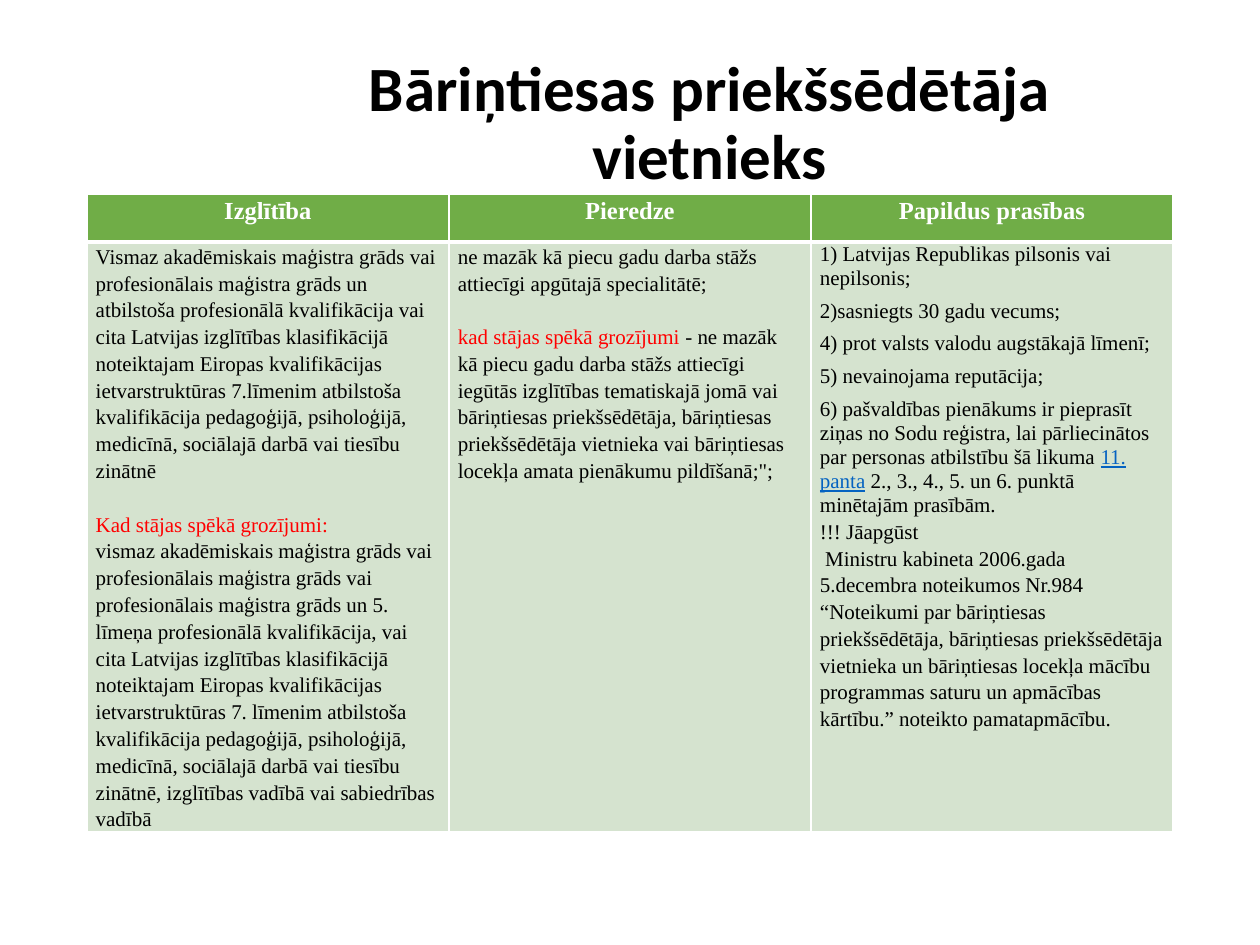
from lxml.etree import SubElement
from pptx import Presentation
from pptx.dml.color import RGBColor
from pptx.enum.text import MSO_ANCHOR, MSO_AUTO_SIZE, PP_ALIGN
from pptx.oxml.ns import qn
from pptx.util import Cm, Pt

BLACK = RGBColor(0x00, 0x00, 0x00)
WHITE = RGBColor(0xFF, 0xFF, 0xFF)
RED = RGBColor(0xFF, 0x00, 0x00)
LINK_BLUE = RGBColor(0x05, 0x63, 0xC1)
HEADER_GREEN = RGBColor(0x70, 0xAD, 0x47)
BODY_GREEN = RGBColor(0xD5, 0xE3, 0xCF)

LOOSE, TIGHT = 1.15, 1.03  # line spacing
ONE_LINE = 15.3  # points, height of one loose line

HEADERS = ["Izglītība", "Pieredze", "Papildus prasības"]

# Each column holds paragraphs: line spacing, space before, runs of (text, colour)
COLUMNS = [
    [
        (LOOSE, 0, [("Vismaz akadēmiskais maģistra grāds vai profesionālais maģistra grāds un "
                     "atbilstoša profesionālā kvalifikācija vai cita Latvijas izglītības "
                     "klasifikācijā noteiktajam Eiropas kvalifikācijas ietvarstruktūras "
                     "7.līmenim atbilstoša kvalifikācija pedagoģijā, psiholoģijā, medicīnā, "
                     "sociālajā darbā vai tiesību zinātnē", BLACK)]),
        (LOOSE, ONE_LINE, [("Kad stājas spēkā grozījumi:", RED)]),
        (LOOSE, 0, [("vismaz akadēmiskais maģistra grāds vai profesionālais maģistra grāds vai "
                     "profesionālais maģistra grāds un 5. līmeņa profesionālā kvalifikācija, "
                     "vai cita Latvijas izglītības klasifikācijā noteiktajam Eiropas "
                     "kvalifikācijas ietvarstruktūras 7. līmenim atbilstoša kvalifikācija "
                     "pedagoģijā, psiholoģijā, medicīnā, sociālajā darbā vai tiesību zinātnē, "
                     "izglītības vadībā vai sabiedrības vadībā", BLACK)]),
    ],
    [
        (LOOSE, 0, [("ne mazāk kā piecu gadu darba stāžs attiecīgi apgūtajā specialitātē;", BLACK)]),
        (LOOSE, ONE_LINE, [
            ("kad stājas spēkā grozījumi ", RED),
            ("- ne mazāk kā piecu gadu darba stāžs attiecīgi iegūtās izglītības tematiskajā "
             "jomā vai bāriņtiesas priekšsēdētāja, bāriņtiesas priekšsēdētāja vietnieka vai "
             "bāriņtiesas locekļa amata pienākumu pildīšanā;\";", BLACK)]),
    ],
    [
        (TIGHT, 0, [("1) Latvijas Republikas pilsonis vai nepilsonis;", BLACK)]),
        (TIGHT, 5, [("2)sasniegts 30 gadu vecums;", BLACK)]),
        (TIGHT, 5, [("4) prot valsts valodu augstākajā līmenī;", BLACK)]),
        (TIGHT, 5, [("5) nevainojama reputācija;", BLACK)]),
        (TIGHT, 5, [
            ("6) pašvaldības pienākums ir pieprasīt ziņas no Sodu reģistra, lai "
             "pārliecinātos par personas atbilstību šā likuma ", BLACK),
            ("11. panta", LINK_BLUE),
            (" 2., 3., 4., 5. un 6. punktā minētajām prasībām.", BLACK)]),
        (LOOSE, 0, [("!!! Jāapgūst", BLACK)]),
        (LOOSE, 0, [(" Ministru kabineta 2006.gada 5.decembra noteikumos Nr.984", BLACK)]),
        (LOOSE, 0, [("“Noteikumi par bāriņtiesas priekšsēdētāja, bāriņtiesas priekšsēdētāja "
                     "vietnieka un bāriņtiesas locekļa mācību programmas saturu un apmācības "
                     "kārtību.” noteikto pamatapmācību.", BLACK)]),
    ],
]


def add_run(paragraph, text, font_name, size, colour, bold=False):
    run = paragraph.add_run()
    run.text = text
    run.font.name = font_name
    run.font.size = Pt(size)
    run.font.bold = bold
    run.font.color.rgb = colour
    run.font.underline = colour == LINK_BLUE


def format_cell(cell, fill_colour, bottom_width):
    """Set margins, white borders (1 pt except the bottom) and fill."""
    cell.margin_left = cell.margin_right = Cm(0.18)
    cell.margin_top = cell.margin_bottom = 0
    properties = cell._tc.get_or_add_tcPr()
    for side, width in (("L", 1), ("R", 1), ("T", 1), ("B", bottom_width)):
        line = SubElement(properties, qn(f"a:ln{side}"), w=str(Pt(width)))
        solid = SubElement(line, qn("a:solidFill"))
        SubElement(solid, qn("a:srgbClr"), val=str(WHITE))
    cell.fill.solid()
    cell.fill.fore_color.rgb = fill_colour


presentation = Presentation()
presentation.slide_width = Cm(25.4)
presentation.slide_height = Cm(19.05)
slide = presentation.slides.add_slide(presentation.slide_layouts[5])

title = slide.shapes.title
title.left, title.top, title.width, title.height = Cm(4.93), Cm(1.02), Cm(18.75), Cm(2.39)
title.text_frame.word_wrap = True
title.text_frame.auto_size = MSO_AUTO_SIZE.NONE
title.text_frame.vertical_anchor = MSO_ANCHOR.TOP
paragraph = title.text_frame.paragraphs[0]
paragraph.alignment = PP_ALIGN.CENTER
paragraph.line_spacing = 0.9
add_run(paragraph, "Bāriņtiesas priekšsēdētāja vietnieks", "Calibri", 36, BLACK, bold=True)

table = slide.shapes.add_table(2, 3, Cm(1.75), Cm(3.91), Cm(21.9), Cm(12.83)).table
table.rows[0].height = Cm(0.97)
table.rows[1].height = Cm(11.86)

for index, (header, paragraphs) in enumerate(zip(HEADERS, COLUMNS)):
    table.columns[index].width = Cm(7.3)

    header_cell = table.cell(0, index)
    format_cell(header_cell, HEADER_GREEN, bottom_width=3)
    paragraph = header_cell.text_frame.paragraphs[0]
    paragraph.alignment = PP_ALIGN.CENTER
    paragraph.line_spacing = LOOSE
    add_run(paragraph, header, "Times New Roman", 14, WHITE, bold=True)

    body_cell = table.cell(1, index)
    format_cell(body_cell, BODY_GREEN, bottom_width=1)
    text_frame = body_cell.text_frame
    for number, (line_spacing, space_before, runs) in enumerate(paragraphs):
        paragraph = text_frame.add_paragraph() if number else text_frame.paragraphs[0]
        paragraph.line_spacing = line_spacing
        paragraph.space_before = Pt(space_before)
        for text, colour in runs:
            add_run(paragraph, text, "Times New Roman", 12, colour)

presentation.save("out.pptx")
